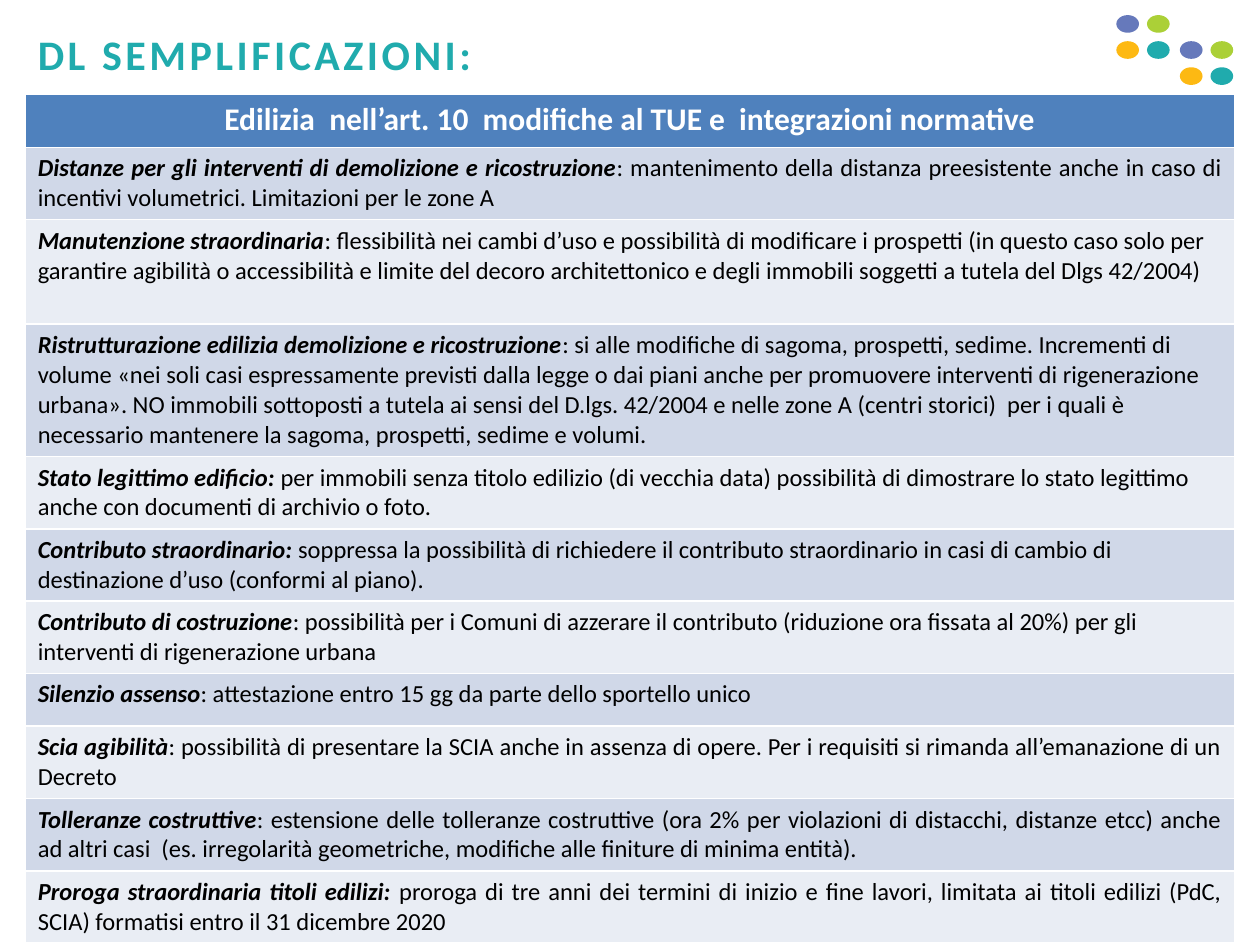
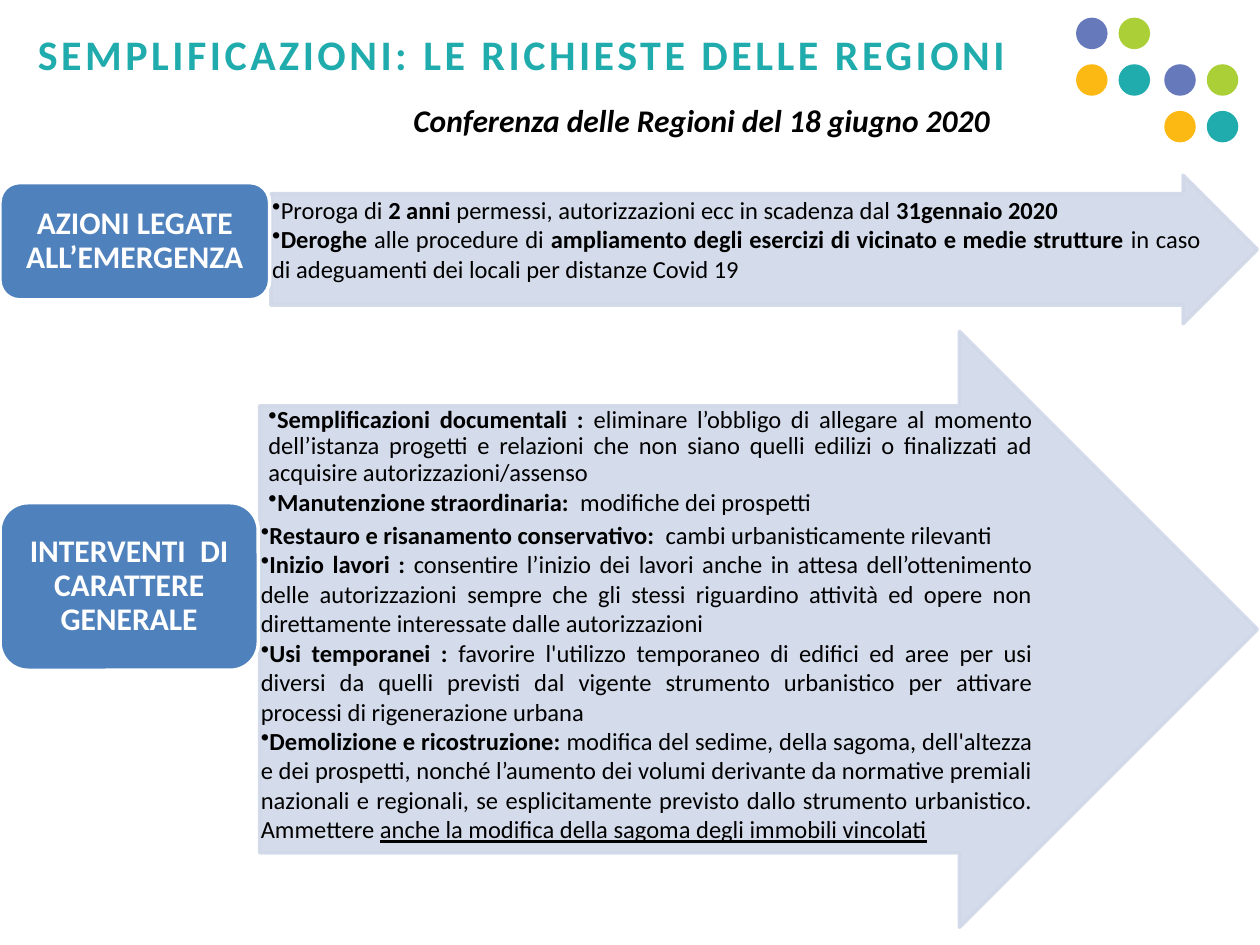
"""Builds two slides on the building rules of the simplification decree."""
from lxml import etree
from pptx import Presentation
from pptx import util as u
from pptx.dml import color
from pptx.enum import shapes, text
from pptx.oxml import ns

FONT = "Calibri"
TEAL, BLUE, PALE, LIGHT = "20ABAD", "4F81BD", "D0D8E8", "E9EDF4"
WHITE, BLACK = "FFFFFF", "000000"
DOT_COLOURS = ["6679BB", "ABD037", "FDB913", TEAL]
LEFT, CENTER, JUSTIFY = text.PP_ALIGN.LEFT, text.PP_ALIGN.CENTER, text.PP_ALIGN.JUSTIFY
rgb = color.RGBColor.from_string

prs = Presentation()
prs.slide_width, prs.slide_height = u.Inches(10), u.Inches(7.5)
UNIT = prs.slide_width // 100


def grid(*cells):
    """Turn counts of grid units (1/100 of the slide width) into lengths."""
    return [u.Emu(round(c * UNIT)) for c in cells]


def write(p, words, size, colour, align=LEFT, italic=False):
    """Fill a paragraph; parts between asterisks are bold."""
    p.alignment = align
    for i, part in enumerate(words.split("*")):
        if part:
            r = p.add_run()
            r.text = part
            r.font.name, r.font.size = FONT, u.Pt(size)
            r.font.color.rgb = rgb(colour)
            r.font.bold = i % 2 == 1
            r.font.italic = italic and i % 2 == 1


headings = [
    ("DL SEMPLIFICAZIONI:", (88.6, 1.2), (1.8, 1.4)),
    ("SEMPLIFICAZIONI: LE RICHIESTE DELLE REGIONI", (85.4, 1.4), (2.5, 2.5)),
]
for heading, (x, y), (w, h) in headings:
    s = prs.slides.add_slide(prs.slide_layouts[5])
    title = s.shapes.title
    title.left, title.top, title.width, title.height = grid(2, 1.8, 96.9, 5)
    tf = title.text_frame
    tf.auto_size = text.MSO_AUTO_SIZE.NONE
    tf.vertical_anchor = text.MSO_ANCHOR.TOP
    write(tf.paragraphs[0], f"*{heading}*", 24, TEAL)
    tf.paragraphs[0].runs[0].font._element.set("spc", "200")

    dots = s.shapes.add_group_shape()
    for first_col, first_row in [(0, 0), (2, 1)]:
        for i, colour in enumerate(DOT_COLOURS):
            col, row = first_col + i % 2, first_row + i // 2
            left = x + w * [0, 1.35, 2.8, 4.15][col]
            sp = dots.shapes.add_shape(
                shapes.MSO_SHAPE.OVAL, *grid(left, y + 1.48 * h * row, w, h))
            sp.shadow.inherit = False
            sp.fill.solid()
            sp.fill.fore_color.rgb = rgb(colour)
            sp.line.fill.background()

decree, requests = prs.slides

rules = [
    (5.3, JUSTIFY, "*Distanze per gli interventi di demolizione e ricostruzione*: mantenimento della distanza "
     "preesistente anche in caso di incentivi volumetrici. Limitazioni per le zone A"),
    (8.3, LEFT, "*Manutenzione straordinaria*: flessibilità nei cambi d’uso e possibilità di modificare i prospetti "
     "(in questo caso solo per garantire agibilità o accessibilità e limite del decoro architettonico e degli "
     "immobili soggetti a tutela del Dlgs 42/2004)"),
    (10.5, LEFT, "*Ristrutturazione edilizia demolizione e ricostruzione*: si alle modifiche di sagoma, prospetti, "
     "sedime. Incrementi di volume «nei soli casi espressamente previsti dalla legge o dai piani anche per "
     "promuovere interventi di rigenerazione urbana». NO immobili sottoposti a tutela ai sensi del D.lgs. 42/2004 "
     "e nelle zone A (centri storici)  per i quali è necessario mantenere la sagoma, prospetti, sedime e volumi."),
    (5.5, LEFT, "*Stato legittimo edificio: *per immobili senza titolo edilizio (di vecchia data) possibilità di "
     "dimostrare lo stato legittimo anche con documenti di archivio o foto."),
    (5.3, LEFT, "*Contributo straordinario: *soppressa la possibilità di richiedere il contributo straordinario in "
     "casi di cambio di destinazione d’uso (conformi al piano)."),
    (5.1, LEFT, "*Contributo di costruzione*: possibilità per i Comuni di azzerare il contributo (riduzione ora "
     "fissata al 20%) per gli interventi di rigenerazione urbana"),
    (4.2, LEFT, "*Silenzio assenso*: attestazione entro 15 gg da parte dello sportello unico"),
    (4.2, JUSTIFY, "*Scia agibilità*: possibilità di presentare la SCIA anche in assenza di opere. Per i requisiti "
     "si rimanda all’emanazione di un Decreto"),
    (4.2, JUSTIFY, "*Tolleranze costruttive*: estensione delle tolleranze costruttive (ora 2% per violazioni di "
     "distacchi, distanze etcc) anche ad altri casi  (es. irregolarità geometriche, modifiche alle finiture di "
     "minima entità)."),
    (4.2, JUSTIFY, "*Proroga straordinaria titoli edilizi: *proroga di tre anni dei termini di inizio e fine lavori, "
     "limitata ai titoli edilizi (PdC, SCIA) formatisi entro il 31 dicembre 2020"),
]
table = decree.shapes.add_table(len(rules) + 1, 1, *grid(2, 7.5, 96, 61)).table
header = table.cell(0, 0)
header.fill.solid()
header.fill.fore_color.rgb = rgb(BLUE)
table.rows[0].height = grid(4.2)[0]
write(header.text_frame.paragraphs[0],
      "*Edilizia  nell’art. 10  modifiche al TUE e  integrazioni normative*", 18, WHITE, CENTER)
for i, (height, align, words) in enumerate(rules, 1):
    table.rows[i].height = grid(height)[0]
    cell = table.cell(i, 0)
    cell.fill.solid()
    cell.fill.fore_color.rgb = rgb(PALE if i % 2 else LIGHT)
    write(cell.text_frame.paragraphs[0], words, 14, BLACK, align, italic=True)

subtitle = requests.shapes.add_textbox(*grid(31.7, 7.5, 48, 4)).text_frame
subtitle.word_wrap = True
write(subtitle.paragraphs[0], "*Conferenza delle Regioni del 18 giugno 2020*", 18, BLACK, CENTER, italic=True)

emergency = [
    "Proroga di *2 anni* permessi, autorizzazioni ecc in scadenza dal *31gennaio 2020*",
    "*Deroghe *alle procedure di *ampliamento degli esercizi di vicinato e medie strutture *in caso di adeguamenti "
    "dei locali per distanze Covid 19",
]
general = [
    "*Semplificazioni documentali : *eliminare l’obbligo di allegare al momento dell’istanza progetti e relazioni "
    "che non siano quelli edilizi o finalizzati ad acquisire autorizzazioni/assenso",
    "*Manutenzione straordinaria:  *modifiche dei prospetti",
    "*Restauro e risanamento conservativo:  *cambi urbanisticamente rilevanti",
    "*Inizio lavori : *consentire l’inizio dei lavori anche in attesa dell’ottenimento delle autorizzazioni sempre "
    "che gli stessi riguardino attività ed opere non direttamente interessate dalle autorizzazioni",
    "*Usi temporanei : *favorire l'utilizzo temporaneo di edifici ed aree per usi diversi da quelli previsti dal "
    "vigente strumento urbanistico per attivare processi di rigenerazione urbana",
    "*Demolizione e ricostruzione: *modifica del sedime, della sagoma, dell'altezza e dei prospetti, nonché "
    "l’aumento dei volumi derivante da normative premiali nazionali e regionali, se esplicitamente previsto dallo "
    "strumento urbanistico. Ammettere **anche la modifica della sagoma degli immobili vincolati",
]
actions = [
    ("AZIONI LEGATE ALL’EMERGENZA", (0, 14.5, 21.4, 9.3), (21.5, 13.9, 78.3, 11.8), emergency, 0),
    ("INTERVENTI  DI CARATTERE GENERALE", (0, 39.9, 20.5, 13.3), (20.6, 26.3, 79.2, 47.3), general, 2),
]
for label, box_at, arrow_at, points, indented in actions:
    arrow = requests.shapes.add_shape(shapes.MSO_SHAPE.RIGHT_ARROW, *grid(*arrow_at))
    arrow.adjustments[0] = 0.75
    box = requests.shapes.add_shape(shapes.MSO_SHAPE.ROUNDED_RECTANGLE, *grid(*box_at))
    looks = [(arrow, PALE, PALE, 0.1, 0.1, text.MSO_ANCHOR.TOP), (box, BLUE, WHITE, 0.7, 0.4, text.MSO_ANCHOR.MIDDLE)]
    for sp, fill, line, side, edge, anchor in looks:
        sp.shadow.inherit = False
        sp.fill.solid()
        sp.fill.fore_color.rgb = rgb(fill)
        sp.line.color.rgb = rgb(line)
        sp.line.width = u.Pt(2)
        tf = sp.text_frame
        tf.word_wrap, tf.vertical_anchor = True, anchor
        tf.margin_left, tf.margin_top, tf.margin_right, tf.margin_bottom = grid(side, edge, side, edge)
    for clr in arrow._element.spPr.iter(ns.qn("a:srgbClr")):
        etree.SubElement(clr, ns.qn("a:alpha"), val="90000")

    p = box.text_frame.paragraphs[0]
    p.line_spacing = 0.9
    write(p, f"*{label}*", 18, WHITE, CENTER)

    tf = arrow.text_frame
    for i, point in enumerate(points):
        p = tf.paragraphs[0] if i == 0 else tf.add_paragraph()
        write(p, point, 14, BLACK, JUSTIFY)
        if i < indented:
            p.line_spacing, p.space_after = 0.9, u.Pt(2)
        pPr = p._p.get_or_add_pPr()
        pPr.set("marL", str(grid(0.6)[0] if i < indented else 0))
        pPr.set("indent", "0")
        etree.SubElement(pPr, ns.qn("a:buChar"), char="•")
p.runs[-1].font.underline = True

prs.save("out.pptx")
